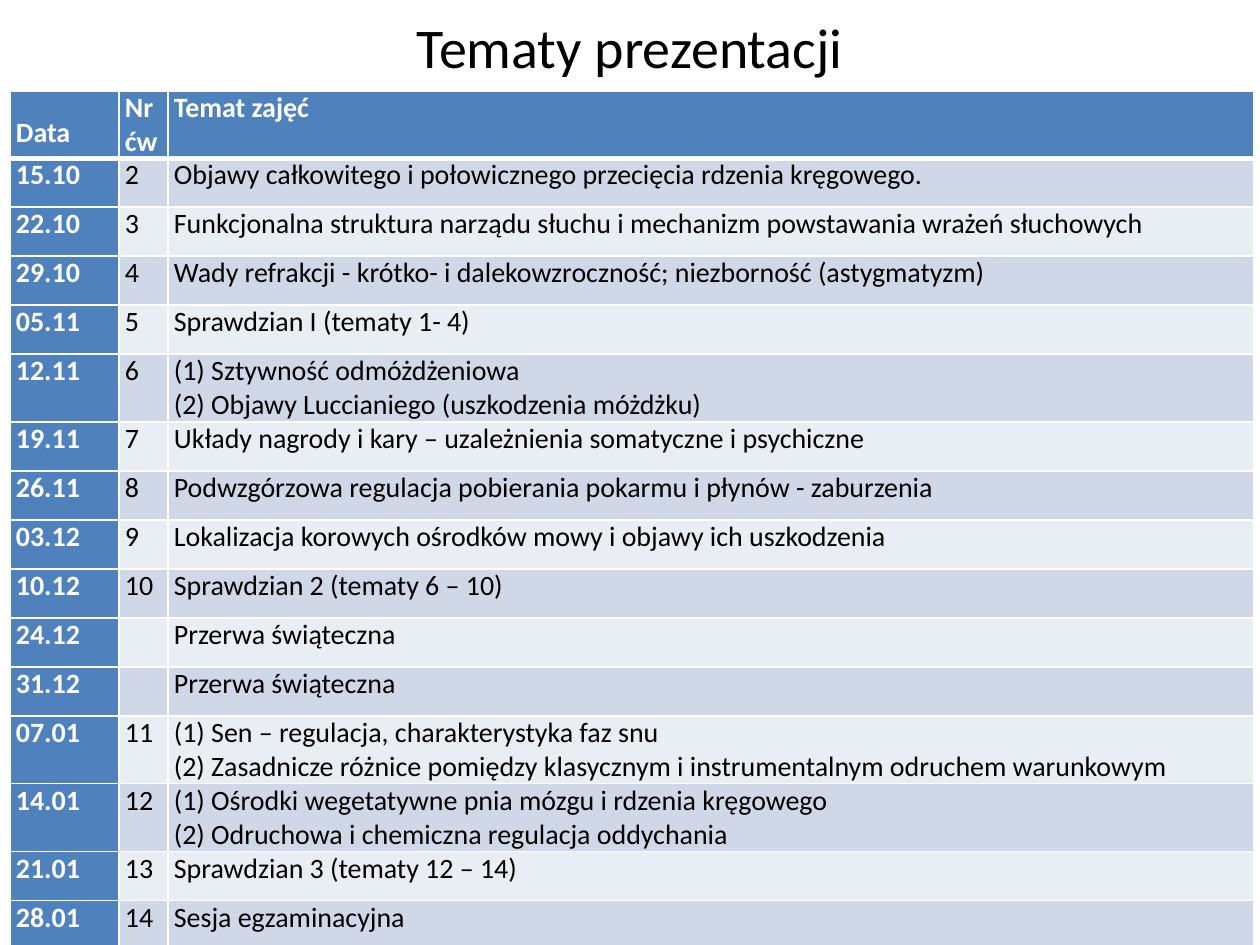
import lxml.etree
import pptx
import pptx.dml.color
import pptx.enum.text
import pptx.oxml.ns
import pptx.util

EMU_PER_PX = 914400 / 126
WHITE = pptx.dml.color.RGBColor(0xFF, 0xFF, 0xFF)
BLACK = pptx.dml.color.RGBColor(0x00, 0x00, 0x00)
BLUE = pptx.dml.color.RGBColor(0x4F, 0x81, 0xBD)
DARK_BAND = pptx.dml.color.RGBColor(0xD0, 0xD8, 0xE8)
LIGHT_BAND = pptx.dml.color.RGBColor(0xE9, 0xED, 0xF4)

HEADINGS = ("Data", "Nr ćw", "Temat zajęć")
CLASSES = [
    ("15.10", "2", "Objawy całkowitego i połowicznego przecięcia rdzenia kręgowego."),
    ("22.10", "3", "Funkcjonalna struktura narządu słuchu i mechanizm powstawania wrażeń słuchowych"),
    ("29.10", "4", "Wady refrakcji - krótko- i dalekowzroczność; niezborność (astygmatyzm)"),
    ("05.11", "5", "Sprawdzian I (tematy 1- 4)"),
    ("12.11", "6", "(1) Sztywność odmóżdżeniowa\n(2) Objawy Luccianiego (uszkodzenia móżdżku)"),
    ("19.11", "7", "Układy nagrody i kary – uzależnienia somatyczne i psychiczne"),
    ("26.11", "8", "Podwzgórzowa regulacja pobierania pokarmu i płynów - zaburzenia"),
    ("03.12", "9", "Lokalizacja korowych ośrodków mowy i objawy ich uszkodzenia"),
    ("10.12", "10", "Sprawdzian 2 (tematy 6 – 10)"),
    ("24.12", "", "Przerwa świąteczna"),
    ("31.12", "", "Przerwa świąteczna"),
    ("07.01", "11", "(1) Sen – regulacja, charakterystyka faz snu\n"
     "(2) Zasadnicze różnice pomiędzy klasycznym i instrumentalnym odruchem warunkowym"),
    ("14.01", "12", "(1) Ośrodki wegetatywne pnia mózgu i rdzenia kręgowego\n"
     "(2) Odruchowa i chemiczna regulacja oddychania"),
    ("21.01", "13", "Sprawdzian 3 (tematy 12 – 14)"),
    ("28.01", "14", "Sesja egzaminacyjna"),
]
COLUMN_WIDTHS = (109, 49, 1086)
HEADER_HEIGHT = 67
LINE_HEIGHTS = {1: 49, 2: 68}


def px(length):
    return pptx.util.Emu(round(length * EMU_PER_PX))


class ScheduleSlide:
    font_name = "Calibri"
    title_size = 32
    body_size = 16

    def __init__(self, presentation):
        self.slide = presentation.slides.add_slide(presentation.slide_layouts[6])

    def format_text(self, frame, size, color, bold=False):
        for paragraph in frame.paragraphs:
            for run in paragraph.runs:
                run.font.name = self.font_name
                run.font.size = pptx.util.Pt(size)
                run.font.bold = bold
                run.font.color.rgb = color

    def title(self, text, left, top, width, height):
        heading = self.slide.shapes.add_textbox(px(left), px(top), px(width), px(height))
        frame = heading.text_frame
        frame.word_wrap = True
        frame.vertical_anchor = pptx.enum.text.MSO_ANCHOR.MIDDLE
        frame.text = text
        frame.paragraphs[0].alignment = pptx.enum.text.PP_ALIGN.CENTER
        self.format_text(frame, self.title_size, BLACK)

    def border(self, cell, side, points):
        properties = cell._tc.get_or_add_tcPr()
        line = lxml.etree.SubElement(properties, pptx.oxml.ns.qn(f"a:ln{side}"),
                                     w=str(pptx.util.Pt(points)))
        fill = lxml.etree.SubElement(line, pptx.oxml.ns.qn("a:solidFill"))
        lxml.etree.SubElement(fill, pptx.oxml.ns.qn("a:srgbClr"), val=str(WHITE))

    def cell(self, cell, text, row, column):
        cell.margin_left = cell.margin_right = px(6)
        cell.margin_top = cell.margin_bottom = 0
        heavy_side = {0: "B", 1: "T"}.get(row)
        for side in "LRTB":
            self.border(cell, side, 3 if side == heavy_side else 1)
        emphasized = row == 0 or column == 0
        band = DARK_BAND if row % 2 else LIGHT_BAND
        cell.fill.solid()
        cell.fill.fore_color.rgb = BLUE if emphasized else band
        cell.text_frame.text = text
        self.format_text(cell.text_frame, self.body_size,
                         WHITE if emphasized else BLACK, emphasized)

    def schedule(self, left, top):
        rows = [HEADINGS] + CLASSES
        heights = [HEADER_HEIGHT]
        heights += [LINE_HEIGHTS[topic.count("\n") + 1] for _, _, topic in CLASSES]
        table = self.slide.shapes.add_table(
            len(rows), len(COLUMN_WIDTHS), px(left), px(top),
            px(sum(COLUMN_WIDTHS)), px(sum(heights))).table
        table.first_col = True
        for column, width in zip(table.columns, COLUMN_WIDTHS):
            column.width = px(width)
        for row, (texts, height) in enumerate(zip(rows, heights)):
            table.rows[row].height = px(height)
            for column, text in enumerate(texts):
                self.cell(table.cell(row, column), text, row, column)
        table.cell(0, 0).margin_top = px(25)


def main():
    presentation = pptx.Presentation()
    presentation.slide_width = px(1260)
    presentation.slide_height = px(945)
    slide = ScheduleSlide(presentation)
    slide.title("Tematy prezentacji", 63, -33, 1134, 158)
    slide.schedule(10, 91)
    presentation.save("out.pptx")


if __name__ == "__main__":
    main()
